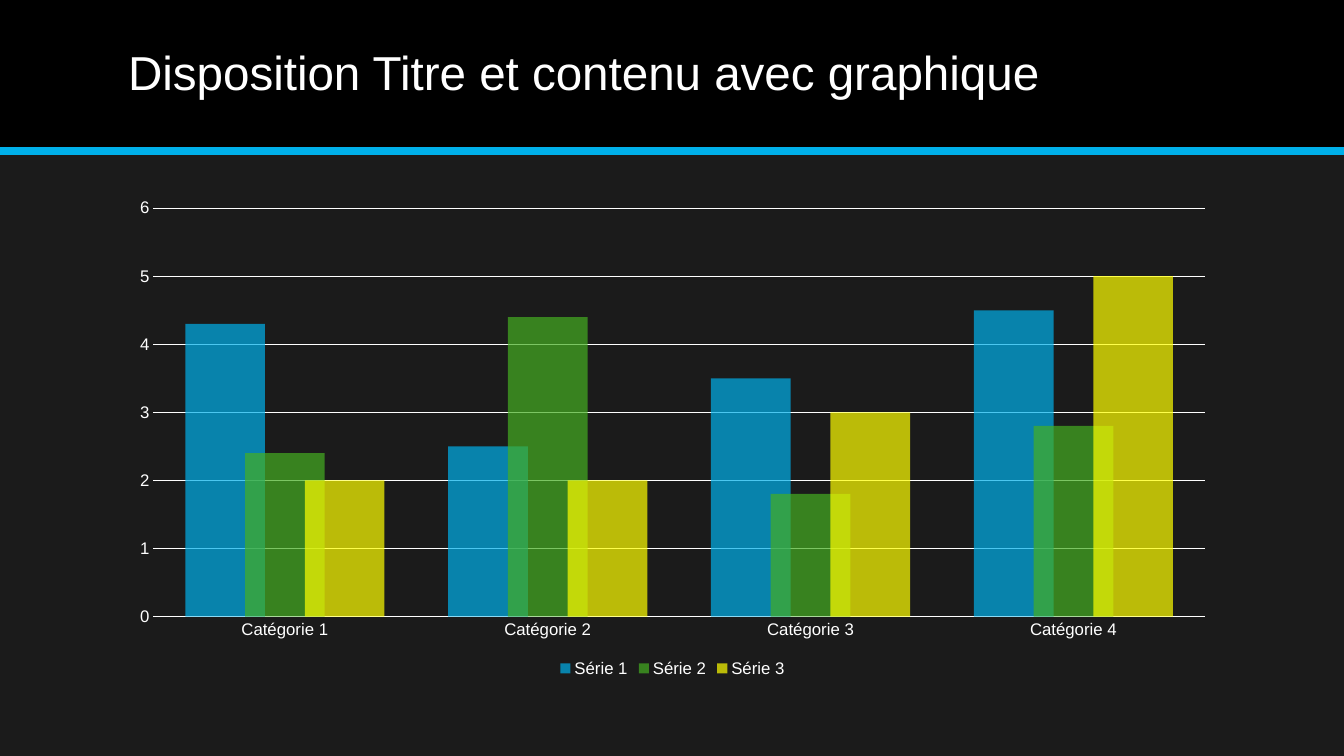
from lxml.etree import SubElement
from pptx import Presentation
from pptx.chart.data import CategoryChartData
from pptx.dml.color import RGBColor
from pptx.enum.chart import XL_CHART_TYPE, XL_LEGEND_POSITION, XL_TICK_MARK
from pptx.enum.shapes import MSO_CONNECTOR, MSO_SHAPE
from pptx.enum.text import MSO_ANCHOR, MSO_AUTO_SIZE, PP_ALIGN
from pptx.oxml.ns import qn
from pptx.util import Pt

PX = 9144
WIDTH, HEIGHT = 1333, 750
FONT = "Arial"
WHITE = RGBColor(0xFF, 0xFF, 0xFF)
BLACK = RGBColor(0x00, 0x00, 0x00)
CHARCOAL = RGBColor(0x1B, 0x1B, 0x1B)
BLUE = RGBColor(0x00, 0xB0, 0xEA)
GREEN = RGBColor(0x45, 0xAE, 0x22)
YELLOW = RGBColor(0xFF, 0xFF, 0x00)

CATEGORIES = [f"Catégorie {n}" for n in range(1, 5)]
SERIES = [
    ("Série 1", (4.3, 2.5, 3.5, 4.5), BLUE),
    ("Série 2", (2.4, 4.4, 1.8, 2.8), GREEN),
    ("Série 3", (2, 2, 3, 5), YELLOW),
]


def px(*lengths):
    return [length * PX for length in lengths]


def style_font(font, size):
    font.name = FONT
    font.size = Pt(size)
    font.color.rgb = WHITE


def set_alpha(fill, percent):
    color = fill._xPr.find(qn("a:solidFill"))[0]
    SubElement(color, qn("a:alpha")).set("val", str(percent * 1000))


def add_header(s, left, top, width, height, text):
    band = s.shapes.add_shape(MSO_SHAPE.RECTANGLE, *px(left, top, width, height))
    band.shadow.inherit = False
    band.fill.solid()
    band.fill.fore_color.rgb = BLACK
    band.line.fill.background()

    bottom = top + height
    rule = s.shapes.add_connector(
        MSO_CONNECTOR.STRAIGHT, *px(left, bottom, left + width, bottom))
    rule.line.color.rgb = BLUE
    rule.line.width = Pt(6)
    SubElement(rule._element.spPr, qn("a:effectLst"))

    title = s.shapes.title
    title.left, title.top, title.width, title.height = px(
        left + 117, top + 14, 1100, 120)
    s.shapes._spTree.append(title._element)
    tf = title.text_frame
    tf.text = text
    tf.word_wrap = True
    tf.auto_size = MSO_AUTO_SIZE.NONE
    tf.vertical_anchor = MSO_ANCHOR.MIDDLE
    p = tf.paragraphs[0]
    p.alignment = PP_ALIGN.LEFT
    p.line_spacing = 0.9
    style_font(p.font, 34)


def style_axes(chart):
    for axis in (chart.category_axis, chart.value_axis):
        axis.major_tick_mark = XL_TICK_MARK.NONE
        axis.minor_tick_mark = XL_TICK_MARK.NONE
        style_font(axis.tick_labels.font, 12)
    line = chart.category_axis.format.line
    line.color.rgb = WHITE
    line.width = Pt(1.25)
    values = chart.value_axis
    values.minimum_scale, values.maximum_scale, values.major_unit = 0, 6, 1
    values.format.line.fill.background()
    values.has_major_gridlines = True
    grid = values.major_gridlines.format.line
    grid.color.rgb = WHITE
    grid.width = Pt(0.75)


def add_column_chart(s, left, top, width, height):
    data = CategoryChartData()
    data.categories = CATEGORIES
    for name, values, _ in SERIES:
        data.add_series(name, values)
    chart = s.shapes.add_chart(
        XL_CHART_TYPE.COLUMN_CLUSTERED, *px(left, top, width, height), data).chart
    chart.has_title = False
    style_font(chart.font, 10)
    style_axes(chart)

    chart.has_legend = True
    chart.legend.position = XL_LEGEND_POSITION.BOTTOM
    chart.legend.include_in_layout = False
    style_font(chart.legend.font, 12)

    plot = chart.plots[0]
    plot.gap_width = 80
    plot.overlap = 25
    plot.vary_by_categories = False
    for series, (_, _, color) in zip(plot.series, SERIES):
        series.invert_if_negative = False
        fill = series.format.fill
        fill.solid()
        fill.fore_color.rgb = color
        set_alpha(fill, 70)


def main():
    prs = Presentation()
    prs.slide_width, prs.slide_height = px(WIDTH, HEIGHT)
    s = prs.slides.add_slide(prs.slide_layouts[5])
    s.background.fill.solid()
    s.background.fill.fore_color.rgb = CHARCOAL
    add_header(s, 0, 0, WIDTH, 150, "Disposition Titre et contenu avec graphique")
    add_column_chart(s, 117, 188, 1100, 488)
    prs.save("out.pptx")


if __name__ == "__main__":
    main()
